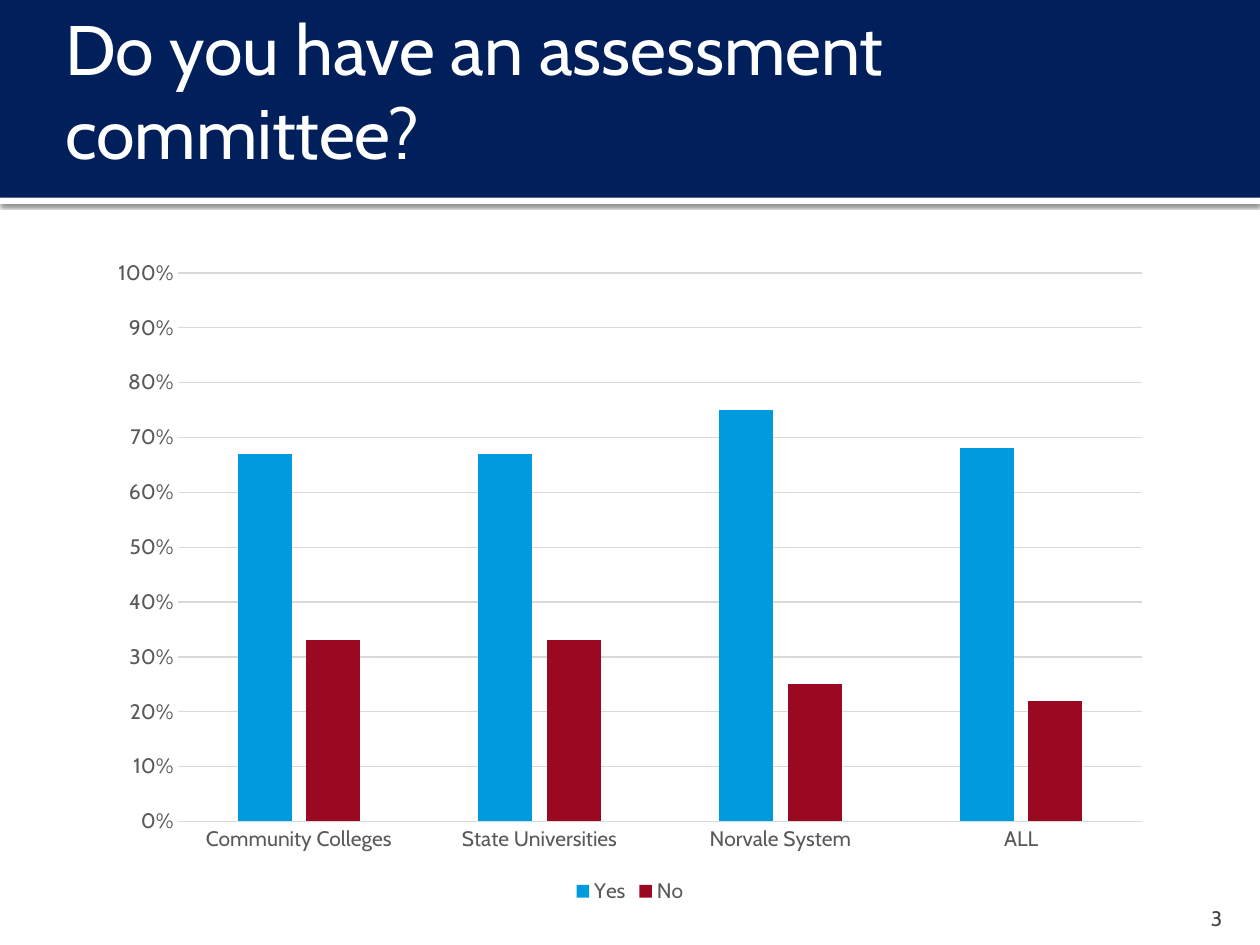
"""Build a slide that compares assessment committees across campus types."""
from dataclasses import dataclass

from lxml.etree import SubElement
from pptx import Presentation
from pptx.chart.data import CategoryChartData
from pptx.dml.color import RGBColor
from pptx.enum.chart import XL_CHART_TYPE, XL_LEGEND_POSITION, XL_TICK_MARK
from pptx.enum.shapes import MSO_SHAPE
from pptx.enum.text import MSO_ANCHOR, MSO_AUTO_SIZE, PP_ALIGN
from pptx.oxml.ns import qn
from pptx.util import Pt


@dataclass(frozen=True)
class Theme:
    font: str = "Cabin"
    white: str = "FFFFFF"
    navy: str = "001F5B"
    number: str = "454545"
    label: str = "595959"
    rule: str = "D9D9D9"
    shadow: str = "000000"
    yes: str = "009BDE"
    no: str = "9B0821"
    title_size: float = 40
    small_size: float = 12


@dataclass(frozen=True)
class Area:
    left: float
    top: float
    width: float
    height: float

    def lengths(self) -> tuple:
        return tuple(Pt(value) for value in (self.left, self.top, self.width, self.height))


@dataclass(frozen=True)
class Answer:
    name: str
    shares: tuple
    color: str


THEME = Theme()
CAMPUSES = ("Community Colleges", "State Universities", "Norvale System", "ALL")
ANSWERS = (
    Answer("Yes", (0.67, 0.67, 0.75, 0.68), THEME.yes),
    Answer("No", (0.33, 0.33, 0.25, 0.22), THEME.no),
)


def paint(target, color: str) -> None:
    target.fill.solid()
    target.fill.fore_color.rgb = RGBColor.from_string(color)


def style_font(font, size: float, color: str) -> None:
    font.name = THEME.font
    font.size = Pt(size)
    font.color.rgb = RGBColor.from_string(color)


def style_line(line, color: str) -> None:
    line.color.rgb = RGBColor.from_string(color)
    line.width = Pt(0.75)


def write_text(box, text: str, *, size: float, color: str, align: PP_ALIGN,
               anchor: MSO_ANCHOR, right: float, bottom: float) -> None:
    frame = box.text_frame
    frame.word_wrap = True
    frame.auto_size = MSO_AUTO_SIZE.NONE
    frame.vertical_anchor = anchor
    frame.margin_left, frame.margin_top = Pt(7.2), Pt(3.6)
    frame.margin_right, frame.margin_bottom = Pt(right), Pt(bottom)
    para = frame.paragraphs[0]
    para.alignment = align
    span = para.add_run()
    span.text = text
    style_font(span.font, size, color)


def add_band(page, area: Area, color: str):
    band = page.shapes.add_shape(MSO_SHAPE.RECTANGLE, *area.lengths())
    band.shadow.inherit = False
    paint(band, color)
    band.line.fill.background()
    return band


def add_shadow(band) -> None:
    effects = band.element.spPr.find(qn("a:effectLst"))
    shadow = SubElement(effects, qn("a:outerShdw"), blurRad=str(Pt(2.5)), dist=str(Pt(0.8)),
                        dir="5400000", algn="tl", rotWithShape="0")
    color = SubElement(shadow, qn("a:srgbClr"), val=THEME.shadow)
    SubElement(color, qn("a:alpha"), val="60000")


def add_title(page, text: str, area: Area) -> None:
    title = page.shapes.title
    title.left, title.top, title.width, title.height = area.lengths()
    write_text(title, text, size=THEME.title_size, color=THEME.white, align=PP_ALIGN.LEFT,
               anchor=MSO_ANCHOR.MIDDLE, right=3.6, bottom=3.6)
    page.shapes.element.append(title.element)


def add_answer_chart(page, area: Area) -> None:
    data = CategoryChartData(number_format="0%")
    data.categories = CAMPUSES
    for answer in ANSWERS:
        data.add_series(answer.name, answer.shares)
    chart = page.shapes.add_chart(XL_CHART_TYPE.COLUMN_CLUSTERED, *area.lengths(), data).chart
    style_font(chart.font, THEME.small_size, THEME.label)
    chart.has_title = False
    chart.has_legend = True
    chart.legend.position = XL_LEGEND_POSITION.BOTTOM
    chart.legend.include_in_layout = False
    style_font(chart.legend.font, THEME.small_size, THEME.label)

    plot = chart.plots[0]
    plot.gap_width, plot.overlap, plot.vary_by_categories = 219, -27, False
    for series, answer in zip(plot.series, ANSWERS):
        paint(series.format, answer.color)
        series.invert_if_negative = False

    for axis in (chart.category_axis, chart.value_axis):
        axis.major_tick_mark = axis.minor_tick_mark = XL_TICK_MARK.NONE
        style_font(axis.tick_labels.font, THEME.small_size, THEME.label)
    style_line(chart.category_axis.format.line, THEME.rule)
    values = chart.value_axis
    values.minimum_scale, values.maximum_scale, values.major_unit = 0, 1, 0.1
    values.tick_labels.number_format = "0%"
    values.tick_labels.number_format_is_linked = False
    values.format.line.fill.background()
    values.has_major_gridlines = True
    style_line(values.major_gridlines.format.line, THEME.rule)


def main() -> None:
    deck = Presentation()
    deck.slide_width, deck.slide_height = Pt(720), Pt(540)
    page = deck.slides.add_slide(deck.slide_layouts[5])
    add_shadow(add_band(page, Area(0, 113, 720, 3.6), THEME.white))
    add_band(page, Area(0, 0, 720, 113), THEME.navy)
    number = page.shapes.add_textbox(*Area(648, 510, 57.6, 21.6).lengths())
    write_text(number, "3", size=THEME.small_size, color=THEME.number, align=PP_ALIGN.RIGHT,
               anchor=MSO_ANCHOR.BOTTOM, right=7.2, bottom=0)
    add_title(page, "Do you have an assessment committee?", Area(30, 18, 660, 66))
    add_answer_chart(page, Area(55.5, 141.3, 609, 378))
    deck.save("out.pptx")


if __name__ == "__main__":
    main()
